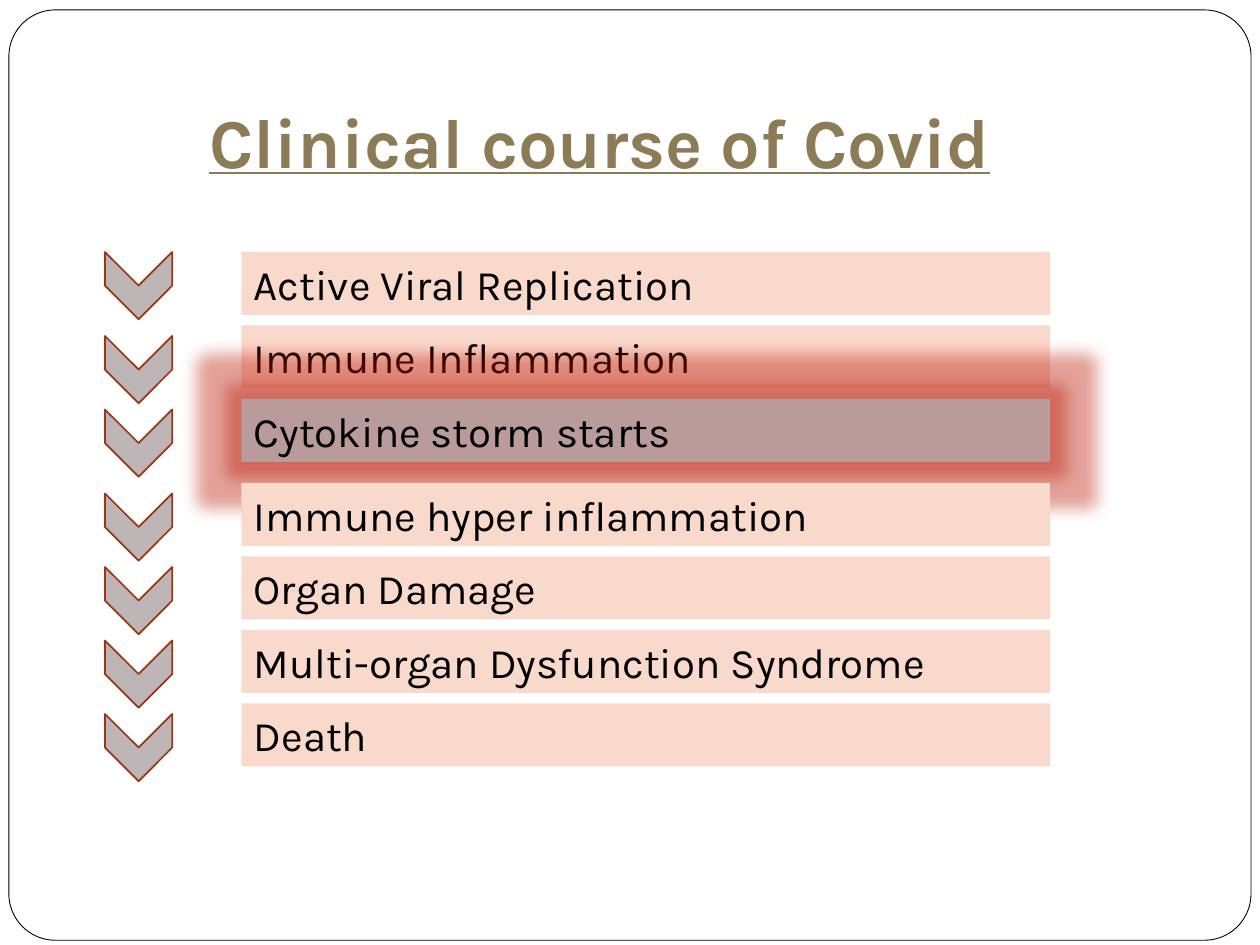
import pptx
import pptx.util
import pptx.dml.color
import pptx.enum.shapes
import pptx.enum.text
import pptx.oxml

Inches = pptx.util.Inches
Pt = pptx.util.Pt
RGB = pptx.dml.color.RGBColor.from_string
SHAPES = pptx.enum.shapes.MSO_SHAPE
ANCHOR = pptx.enum.text.MSO_ANCHOR

COLOURS = {
    "paper": "FFFFFF", "ink": "000000", "title": "8B7B57",
    "chevron": "BDB5B6", "chevron_line": "9C3511",
    "stage": "FAD9CD", "storm": "B99B9B", "glow": "BA1400",
}
UNIT = Inches(1) / 12  # grid step for the stages
TOP = 24               # first row, in grid steps

# stage, row of its bar, row of its chevron
STAGES = [
    ("Active Viral Replication", 0, 0),
    ("Immune Inflammation", 7, 8),
    ("Cytokine storm starts", 14, 15),
    ("Immune hyper inflammation", 22, 23),
    ("Organ Damage", 29, 30),
    ("Multi-organ Dysfunction Syndrome", 36, 37),
    ("Death", 43, 44),
]


def write(box, text, size, colour, anchor, bold=False, underline=False):
    frame = box.text_frame
    frame.word_wrap = True
    frame.auto_size = pptx.enum.text.MSO_AUTO_SIZE.NONE
    frame.vertical_anchor = anchor
    para = frame.paragraphs[0]
    para.alignment = pptx.enum.text.PP_ALIGN.LEFT
    span = para.add_run()
    span.text = text
    span.font.name = "Karla"
    span.font.size = Pt(size)
    span.font.bold = bold
    span.font.underline = underline
    span.font.color.rgb = RGB(COLOURS[colour])


def add_block(page, kind, place, fill, line=None, width=1):
    """Add a flat shape at (left, top, width, height) in grid steps."""
    block = page.shapes.add_shape(kind, *(round(step * UNIT) for step in place))
    block.shadow.inherit = False
    block.fill.solid()
    block.fill.fore_color.rgb = RGB(COLOURS[fill])
    if line:
        block.line.color.rgb = RGB(COLOURS[line])
        block.line.width = Pt(width)
    else:
        block.line.fill.background()
    return block


deck = pptx.Presentation()
deck.slide_width = Inches(10)
deck.slide_height = Inches(7.5)
page = deck.slides.add_slide(deck.slide_layouts[5])
title = page.shapes.title

border = add_block(page, SHAPES.ROUNDED_RECTANGLE, (0.85, 0.95, 118.3, 88.6),
                   "paper", "ink", 0.5)
border.adjustments[0] = 0.05
title._element.addprevious(border._element)

title.left, title.top = Inches(1), Inches(0.3)
title.width, title.height = Inches(8.5), Inches(1.25)
title.text_frame.margin_left = Inches(0.66)
title.text_frame.margin_bottom = Inches(0.1)
write(title, "Clinical course of Covid", 40, "title", ANCHOR.BOTTOM,
      bold=True, underline=True)

for stage, bar_row, chevron_row in STAGES:
    chevron = add_block(page, SHAPES.CHEVRON, (10, TOP + chevron_row, 6.4, 6.4),
                        "chevron", "chevron_line")
    chevron.rotation = 90

    is_storm = stage.startswith("Cytokine")
    bar = add_block(page, SHAPES.RECTANGLE, (23, TOP + bar_row, 77, 6),
                    "storm" if is_storm else "stage")
    write(bar, stage, 24, "ink", ANCHOR.MIDDLE)
    if is_storm:
        effects = bar._element.spPr.find(pptx.oxml.ns.qn("a:effectLst"))
        effects.append(pptx.oxml.parse_xml(
            f'<a:glow {pptx.oxml.ns.nsdecls("a")} rad="{Pt(18)}">'
            f'<a:srgbClr val="{COLOURS["glow"]}"><a:alpha val="40000"/>'
            '</a:srgbClr></a:glow>'))

deck.save("out.pptx")
